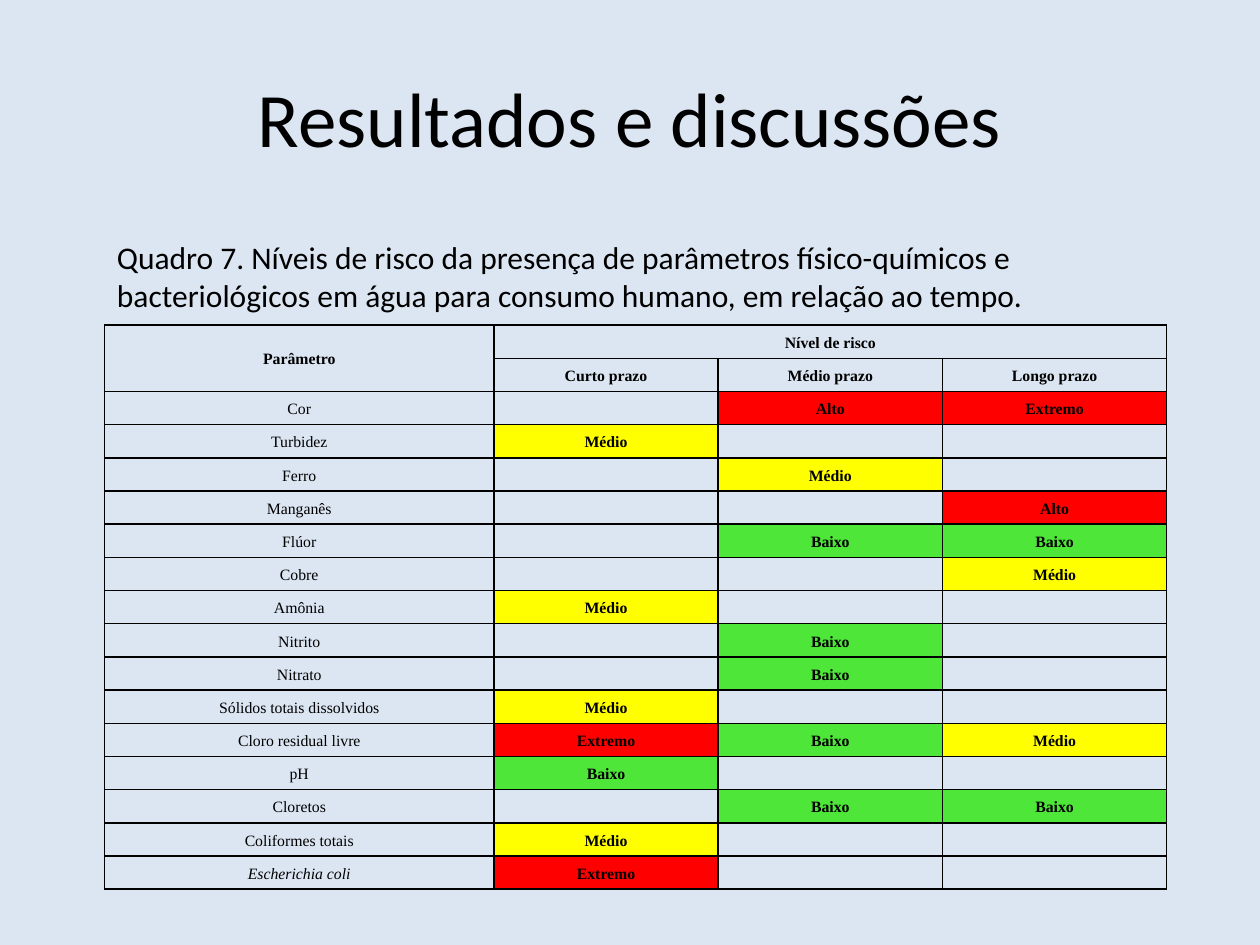
from lxml.etree import SubElement
from pptx import Presentation
from pptx.dml.color import RGBColor
from pptx.enum.text import MSO_ANCHOR, PP_ALIGN
from pptx.oxml.ns import qn
from pptx.util import Inches, Pt

BACKGROUND = RGBColor(0xDC, 0xE6, 0xF2)
BLACK = RGBColor(0, 0, 0)
RED = RGBColor(0xFF, 0, 0)
YELLOW = RGBColor(0xFF, 0xFF, 0)
GREEN = RGBColor(0x4E, 0xE7, 0x39)

TITLE = "Resultados e discussões"
CAPTION = ("Quadro 7. Níveis de risco da presença de parâmetros físico-químicos e "
           "bacteriológicos em água para consumo humano, em relação ao tempo.")
HEADER = [
    ("Parâmetro", "Nível de risco", "", ""),
    ("", "Curto prazo", "Médio prazo", "Longo prazo"),
]
RISKS = [
    ("Cor", "", "Alto", "Extremo"),
    ("Turbidez", "Médio", "", ""),
    ("Ferro", "", "Médio", ""),
    ("Manganês", "", "", "Alto"),
    ("Flúor", "", "Baixo", "Baixo"),
    ("Cobre", "", "", "Médio"),
    ("Amônia", "Médio", "", ""),
    ("Nitrito", "", "Baixo", ""),
    ("Nitrato", "", "Baixo", ""),
    ("Sólidos totais dissolvidos", "Médio", "", ""),
    ("Cloro residual livre", "Extremo", "Baixo", "Médio"),
    ("pH", "Baixo", "", ""),
    ("Cloretos", "", "Baixo", "Baixo"),
    ("Coliformes totais", "Médio", "", ""),
    ("Escherichia coli", "Extremo", "", ""),
]
LEVEL_FILLS = {"Baixo": GREEN, "Médio": YELLOW, "Alto": RED, "Extremo": RED}
ITALIC_NAMES = {"Escherichia coli"}

LEFT, TABLE_TOP, TABLE_HEIGHT = 0.83, 2.58, 4.48
COLUMN_WIDTHS = [3.09] + [1.78] * 3


def style(para, size, name, bold=False, italic=False):
    font = para.font
    font.size, font.name = Pt(size), name
    font.bold, font.italic = bold, italic
    font.color.rgb = BLACK


def add_text(page, text, area, size, align, anchor):
    frame = page.shapes.add_textbox(*map(Inches, area)).text_frame
    frame.word_wrap = True
    frame.vertical_anchor = anchor
    para = frame.paragraphs[0]
    para.text, para.alignment = text, align
    style(para, size, "Calibri")


def add_borders(cell):
    """Draw the four 1 pt edges; they must precede the fill in the cell XML."""
    properties = cell._tc.get_or_add_tcPr()
    for edge in ("a:lnL", "a:lnR", "a:lnT", "a:lnB"):
        line = SubElement(properties, qn(edge), w=str(Pt(1)))
        SubElement(SubElement(line, qn("a:solidFill")), qn("a:srgbClr"), val=str(BLACK))


def fill_cell(cell, text, is_header, is_name):
    add_borders(cell)
    if not is_header and text in LEVEL_FILLS:
        cell.fill.solid()
        cell.fill.fore_color.rgb = LEVEL_FILLS[text]
    else:
        cell.fill.background()
    cell.vertical_anchor = MSO_ANCHOR.MIDDLE
    cell.margin_left = cell.margin_right = Inches(0.07)
    cell.margin_top = cell.margin_bottom = 0
    para = cell.text_frame.paragraphs[0]
    para.text, para.alignment = text, PP_ALIGN.CENTER
    para.line_spacing, para.space_after = 1.15, Pt(10)
    style(para, 9, "Times New Roman", is_header or not is_name, text in ITALIC_NAMES)
    if not text:  # an empty cell takes its line height from the end mark
        SubElement(para._p, qn("a:endParaRPr"), sz="900")


def add_risk_table(page):
    rows = HEADER + RISKS
    table = page.shapes.add_table(
        len(rows), len(COLUMN_WIDTHS), Inches(LEFT), Inches(TABLE_TOP),
        Inches(sum(COLUMN_WIDTHS)), Inches(TABLE_HEIGHT)).table
    table.first_row = table.horz_banding = False
    for column, width in zip(table.columns, COLUMN_WIDTHS):
        column.width = Inches(width)
    for r, values in enumerate(rows):
        table.rows[r].height = Inches(TABLE_HEIGHT / len(rows))
        for c, text in enumerate(values):
            fill_cell(table.cell(r, c), text, r < len(HEADER), c == 0)
    table.cell(0, 0).merge(table.cell(1, 0))
    table.cell(0, 1).merge(table.cell(0, 3))


def main():
    deck = Presentation()
    deck.slide_width, deck.slide_height = Inches(10), Inches(7.5)
    page = deck.slides.add_slide(deck.slide_layouts[6])
    page.background.fill.solid()
    page.background.fill.fore_color.rgb = BACKGROUND
    add_text(page, TITLE, (0.5, 0.3, 9, 1.25), 44, PP_ALIGN.CENTER, MSO_ANCHOR.MIDDLE)
    add_text(page, CAPTION, (LEFT, 1.84, 8.58, 0.71), 18, PP_ALIGN.LEFT, MSO_ANCHOR.TOP)
    add_risk_table(page)
    deck.save("out.pptx")


if __name__ == "__main__":
    main()
